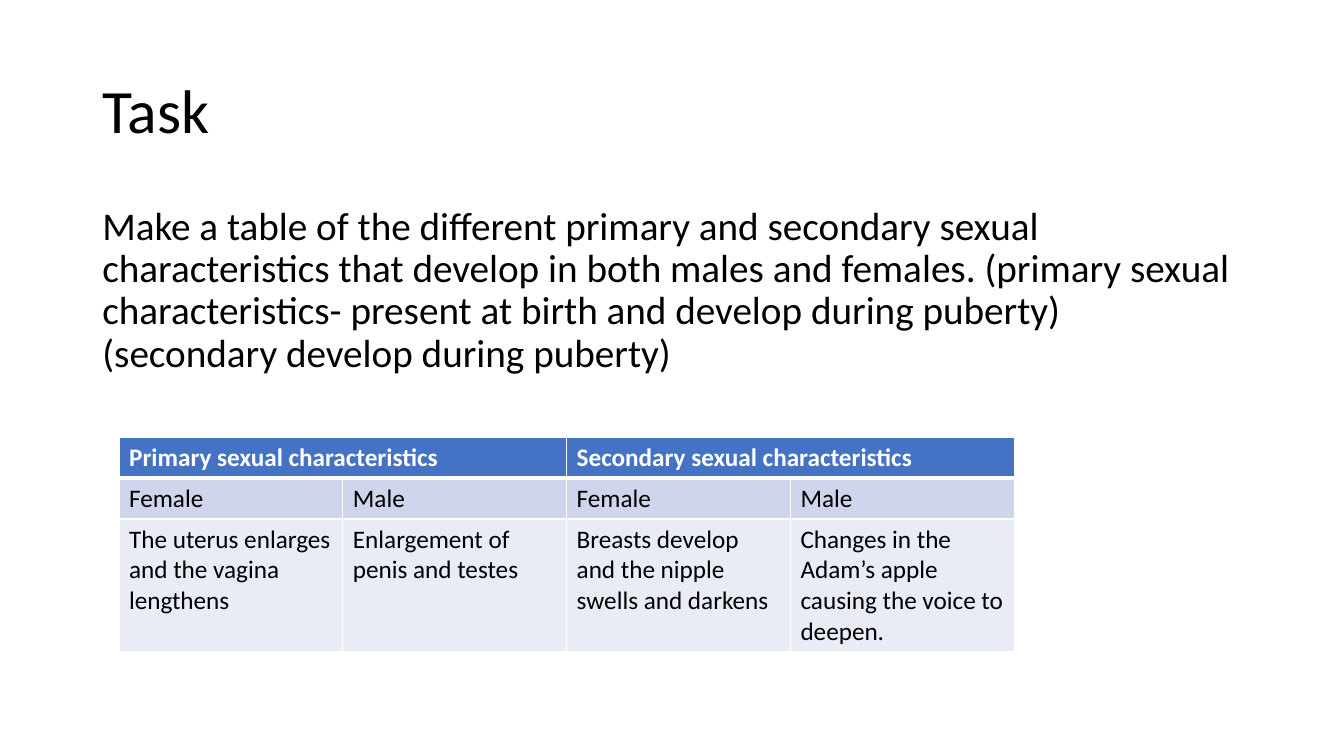
from dataclasses import dataclass

from lxml.etree import SubElement
from pptx import Presentation
from pptx.dml.color import RGBColor
from pptx.enum.text import MSO_ANCHOR as Anchor
from pptx.oxml.ns import qn
from pptx.slide import Slide
from pptx.table import _Cell as Cell
from pptx.util import Cm, Pt

BLACK = RGBColor(0x00, 0x00, 0x00)
WHITE = RGBColor(0xFF, 0xFF, 0xFF)
BLUE = RGBColor(0x44, 0x72, 0xC4)
LIGHT_BLUE = RGBColor(0xCF, 0xD5, 0xEA)
PALE_BLUE = RGBColor(0xE9, 0xEB, 0xF5)

FONT = "Calibri"
COLUMN_WIDTH = 5.64


@dataclass
class TextBlock:
    text: str
    top: float
    height: float
    size: int
    anchor: Anchor
    space_before: int = 0


@dataclass
class TableRow:
    texts: list[str]
    height: float
    fill: RGBColor
    color: RGBColor = BLACK
    bold: bool = False
    span: int = 1
    bottom_line: int = 1
    top_line: int = 1


TEXT_BLOCKS = [
    TextBlock("Task", 1.01, 3.68, 44, Anchor.MIDDLE),
    TextBlock(
        "Make a table of the different primary and secondary sexual "
        "characteristics that develop in both males and females. "
        "(primary sexual characteristics- present at birth and develop "
        "during puberty) (secondary develop during puberty)",
        5.07, 12.09, 28, Anchor.TOP, 10),
]

TABLE_ROWS = [
    TableRow(["Primary sexual characteristics", "Secondary sexual characteristics"],
             1.03, BLUE, WHITE, bold=True, span=2, bottom_line=3),
    TableRow(["Female", "Male"] * 2, 1.03, LIGHT_BLUE, top_line=3),
    TableRow(["The uterus enlarges and the vagina lengthens",
              "Enlargement of penis and testes",
              "Breasts develop and the nipple swells and darkens",
              "Changes in the Adam’s apple causing the voice to deepen."],
             3.33, PALE_BLUE),
]


def set_font(font, size: int, color: RGBColor, bold: bool = False) -> None:
    for name, value in {"name": FONT, "size": Pt(size), "bold": bold}.items():
        setattr(font, name, value)
    font.color.rgb = color


def add_text(slide: Slide, block: TextBlock) -> None:
    box = slide.shapes.add_textbox(Cm(2.33), Cm(block.top), Cm(29.21), Cm(block.height))
    frame = box.text_frame
    frame.word_wrap = True
    frame.vertical_anchor = block.anchor
    paragraph = frame.paragraphs[0]
    paragraph.line_spacing = 0.9
    paragraph.space_before = Pt(block.space_before)
    run = paragraph.add_run()
    run.text = block.text
    set_font(run.font, block.size, BLACK)


def style_cell(cell: Cell, row: TableRow) -> None:
    # Borders come before the fill in the cell properties
    properties = cell._tc.get_or_add_tcPr()
    widths = {"L": 1, "R": 1, "T": row.top_line, "B": row.bottom_line}
    for side, width in widths.items():
        line = SubElement(properties, qn(f"a:ln{side}"), w=str(Pt(width)))
        solid = SubElement(line, qn("a:solidFill"))
        SubElement(solid, qn("a:srgbClr"), val=str(WHITE))
    cell.fill.solid()
    cell.fill.fore_color.rgb = row.fill


def add_characteristics(slide: Slide, rows: list[TableRow]) -> None:
    columns = max(len(row.texts) for row in rows)
    table = slide.shapes.add_table(
        len(rows), columns, Cm(3), Cm(11.02), Cm(COLUMN_WIDTH * columns),
        Cm(sum(row.height for row in rows))).table
    for column in table.columns:
        column.width = Cm(COLUMN_WIDTH)
    for index, row in enumerate(rows):
        table.rows[index].height = Cm(row.height)
        for column in range(columns):
            style_cell(table.cell(index, column), row)
        for position, text in enumerate(row.texts):
            first = position * row.span
            cell = table.cell(index, first)
            if row.span > 1:
                cell.merge(table.cell(index, first + row.span - 1))
            run = cell.text_frame.paragraphs[0].add_run()
            run.text = text
            set_font(run.font, 18, row.color, row.bold)


def main() -> None:
    presentation = Presentation()
    presentation.slide_width = Cm(33.87)
    presentation.slide_height = Cm(19.05)
    slide = presentation.slides.add_slide(presentation.slide_layouts[6])

    # Heading and instructions
    for block in TEXT_BLOCKS:
        add_text(slide, block)

    # Table of characteristics
    add_characteristics(slide, TABLE_ROWS)

    presentation.save("out.pptx")


if __name__ == "__main__":
    main()
